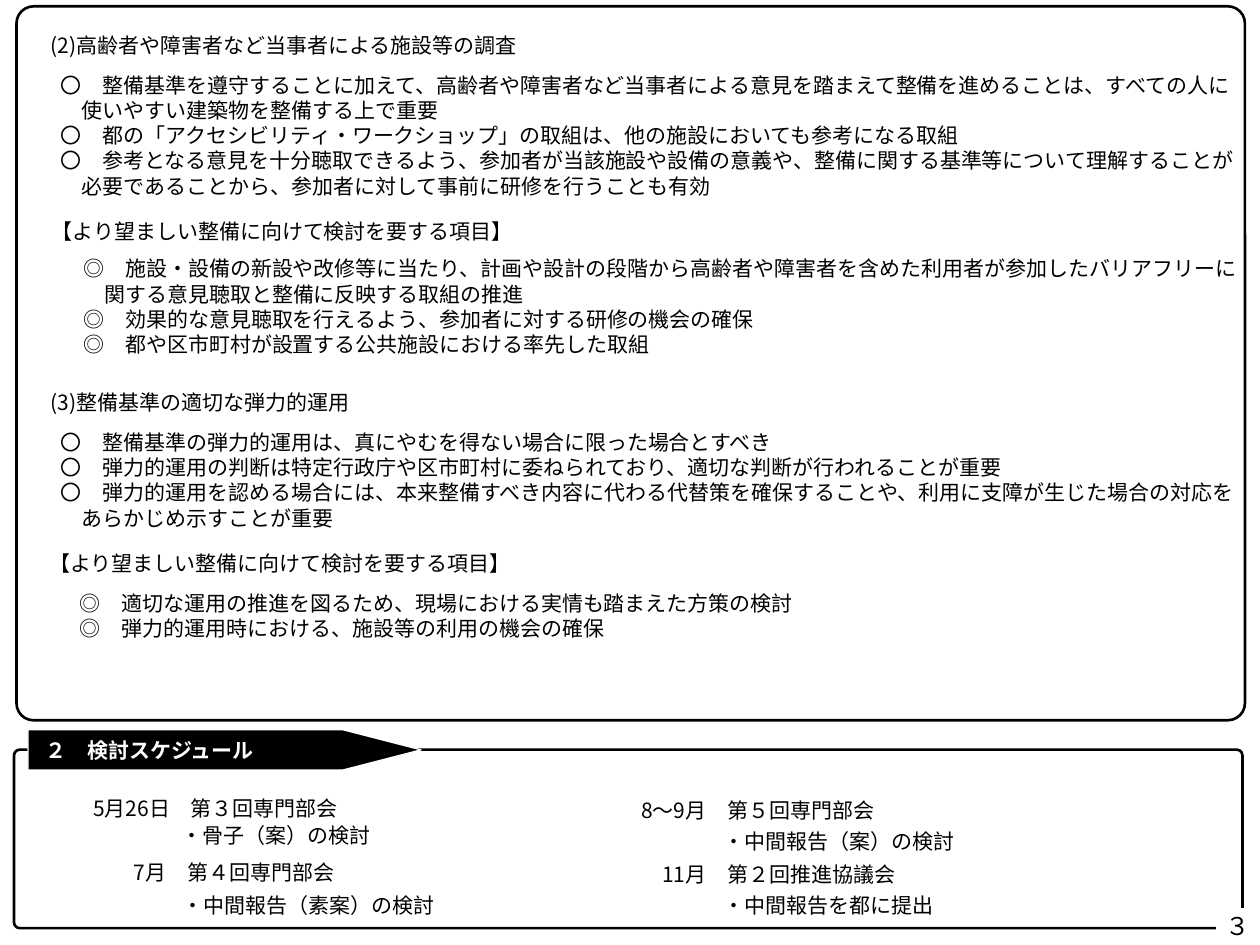
from dataclasses import dataclass

import lxml.etree
import pptx
import pptx.dml.color
import pptx.enum.shapes
import pptx.enum.text
import pptx.oxml.ns
import pptx.util

Pt = pptx.util.Pt
ShapeType = pptx.enum.shapes.MSO_SHAPE
Align = pptx.enum.text.PP_ALIGN
BLACK = pptx.dml.color.RGBColor(0, 0, 0)
WHITE = pptx.dml.color.RGBColor(255, 255, 255)
JAPANESE = "Noto Sans CJK JP"
HANGING = 12


@dataclass
class TextBlock:
    left: float
    top: float
    width: float
    height: float
    lines: tuple[str, ...]
    hanging: float = 0


@dataclass
class Panel:
    kind: ShapeType
    left: float
    top: float
    width: float
    height: float
    adjustment: float | None = None
    fill: pptx.dml.color.RGBColor | None = None
    line: pptx.dml.color.RGBColor | None = None
    line_width: float = 1.5


def write_lines(shape, lines, size=12, color=BLACK, bold=False, font=JAPANESE,
                align=Align.LEFT, hanging=0, left_inset=3) -> None:
    frame = shape.text_frame
    frame.word_wrap = True
    frame.vertical_anchor = pptx.enum.text.MSO_ANCHOR.MIDDLE
    frame.margin_left, frame.margin_right = Pt(left_inset), Pt(0)
    frame.margin_top = frame.margin_bottom = Pt(2)
    frame.text = "\n".join(line.replace("\v", "\x0b") for line in lines)
    for paragraph in frame.paragraphs:
        paragraph.alignment = align
        paragraph.font.size = Pt(size)
        paragraph.font.bold = bold
        paragraph.font.color.rgb = color
        paragraph.font.name = font
        properties = paragraph._p.get_or_add_pPr()
        defaults = properties.find(pptx.oxml.ns.qn("a:defRPr"))
        east_asian = lxml.etree.SubElement(defaults, pptx.oxml.ns.qn("a:ea"))
        east_asian.set("typeface", JAPANESE)
        if hanging:
            properties.set("marL", str(Pt(hanging)))
            properties.set("indent", str(-Pt(hanging)))


def draw_text(slide, block: TextBlock) -> None:
    box = slide.shapes.add_textbox(
        Pt(block.left), Pt(block.top), Pt(block.width), Pt(block.height))
    write_lines(box, block.lines, hanging=block.hanging)


def draw_panel(slide, panel: Panel):
    shape = slide.shapes.add_shape(
        panel.kind, Pt(panel.left), Pt(panel.top), Pt(panel.width), Pt(panel.height))
    shape.shadow.inherit = False
    if panel.adjustment is not None:
        shape.adjustments[0] = panel.adjustment
    if panel.fill is None:
        shape.fill.background()
    else:
        shape.fill.solid()
        shape.fill.fore_color.rgb = panel.fill
    if panel.line is None:
        shape.line.fill.background()
    else:
        shape.line.color.rgb = panel.line
        shape.line.width = Pt(panel.line_width)
    return shape


SUBHEADING = "【より望ましい整備に向けて検討を要する項目】"

FINDINGS = (
    TextBlock(26, 15, 476, 22, ("(2)高齢者や障害者など当事者による施設等の調査",)),
    TextBlock(31.7, 35.3, 679, 84, (
        "〇　整備基準を遵守することに加えて、高齢者や障害者など当事者による意見を踏まえて整備を進めることは、すべての人に"
        "\v使いやすい建築物を整備する上で重要",
        "〇　都の「アクセシビリティ・ワークショップ」の取組は、他の施設においても参考になる取組",
        "〇　参考となる意見を十分聴取できるよう、参加者が当該施設や設備の意義や、整備に関する基準等について理解することが"
        "\v必要であることから、参加者に対して事前に研修を行うことも有効",
    ), HANGING),
    TextBlock(26.6, 119, 476, 26, (SUBHEADING,)),
    TextBlock(44.6, 137, 679, 76, (
        "◎　施設・設備の新設や改修等に当たり、計画や設計の段階から高齢者や障害者を含めた利用者が参加したバリアフリーに"
        "\v関する意見聴取と整備に反映する取組の推進",
        "◎　効果的な意見聴取を行えるよう、参加者に対する研修の機会の確保",
        "◎　都や区市町村が設置する公共施設における率先した取組",
    ), HANGING),
    TextBlock(26, 219, 476, 22, ("(3)整備基準の適切な弾力的運用",)),
    TextBlock(31.7, 239.8, 679, 69, (
        "〇　整備基準の弾力的運用は、真にやむを得ない場合に限った場合とすべき",
        "〇　弾力的運用の判断は特定行政庁や区市町村に委ねられており、適切な判断が行われることが重要",
        "〇　弾力的運用を認める場合には、本来整備すべき内容に代わる代替策を確保することや、利用に支障が生じた場合の対応を"
        "\vあらかじめ示すことが重要",
    ), HANGING),
    TextBlock(25.2, 313, 476, 18, (SUBHEADING,)),
    TextBlock(42.5, 330.5, 679, 42.5, (
        "◎　適切な運用の推進を図るため、現場における実情も踏まえた方策の検討",
        "◎　弾力的運用時における、施設等の利用の機会の確保",
    ), HANGING),
)

SCHEDULE = (
    TextBlock(50.2, 453, 250, 18, ("5月26日　第３回専門部会",)),
    TextBlock(101, 468, 152, 19, ("・骨子（案）の検討",)),
    TextBlock(73.6, 489, 230, 19, ("7月　第４回専門部会",)),
    TextBlock(101.5, 507.6, 178, 19, ("・中間報告（素案）の検討",)),
    TextBlock(363.4, 453, 250, 20, ("8～9月　第５回専門部会",)),
    TextBlock(410.4, 471, 158, 19, ("・中間報告（案）の検討",)),
    TextBlock(375.4, 486, 300, 26.6, ("11月　第２回推進協議会",)),
    TextBlock(410.4, 507.6, 158, 19, ("・中間報告を都に提出",)),
)

FINDINGS_PANEL = Panel(ShapeType.ROUNDED_RECTANGLE, 9.4, 3.6, 702, 408, 0.024, line=BLACK)
SCHEDULE_PANEL = Panel(ShapeType.ROUNDED_RECTANGLE, 8, 428.4, 702, 102, 0.032, line=BLACK)
SCHEDULE_BANNER = Panel(ShapeType.PENTAGON, 16, 417, 224.6, 23, 1.94, BLACK, WHITE, 0.75)
PAGE_NUMBER = Panel(ShapeType.RECTANGLE, 695, 519, 24.5, 20, fill=WHITE)


def main() -> None:
    presentation = pptx.Presentation()
    presentation.slide_width, presentation.slide_height = Pt(720), Pt(540)
    slide = presentation.slides.add_slide(presentation.slide_layouts[6])
    draw_panel(slide, FINDINGS_PANEL)
    draw_panel(slide, SCHEDULE_PANEL)
    for block in FINDINGS + SCHEDULE:
        draw_text(slide, block)
    banner = draw_panel(slide, SCHEDULE_BANNER)
    write_lines(banner, ("２　検討スケジュール",), color=WHITE, bold=True, left_inset=10)
    page_number = draw_panel(slide, PAGE_NUMBER)
    write_lines(page_number, ("３",), size=14, font="Calibri",
                align=Align.CENTER, left_inset=0)
    presentation.save("out.pptx")


if __name__ == "__main__":
    main()
